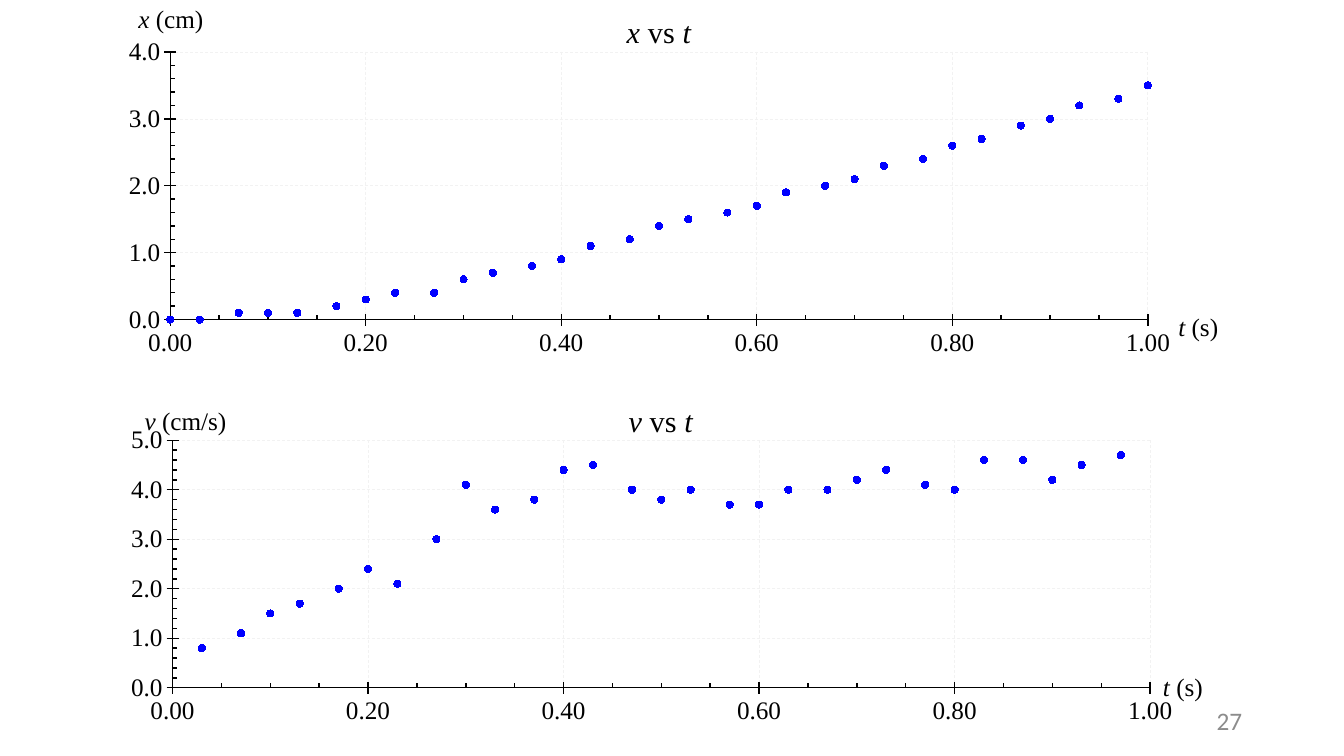
"""Build a slide with position and velocity scatter charts."""
from lxml.etree import SubElement
from pptx import Presentation
from pptx.chart.data import XyChartData
from pptx.dml.color import RGBColor
from pptx.enum.chart import XL_CHART_TYPE, XL_MARKER_STYLE, XL_TICK_MARK
from pptx.enum.dml import MSO_LINE
from pptx.enum.text import MSO_ANCHOR, PP_ALIGN
from pptx.oxml.ns import qn
from pptx.util import Inches, Pt

WIDTH, HEIGHT = Inches(13.33), Inches(7.5)
COLORS = {"text": "000000", "grid": "F2F2F2", "point": "0000FF", "number": "8C8C8C"}
SERIF = "Times New Roman"
FRAMES_PER_SECOND = 30

POSITIONS = [0, 0, 0.1, 0.1, 0.1, 0.2, 0.3, 0.4, 0.4, 0.6, 0.7, 0.8, 0.9, 1.1, 1.2, 1.4,
             1.5, 1.6, 1.7, 1.9, 2, 2.1, 2.3, 2.4, 2.6, 2.7, 2.9, 3, 3.2, 3.3, 3.5]
VELOCITIES = [None, 0.8, 1.1, 1.5, 1.7, 2, 2.4, 2.1, 3, 4.1, 3.6, 3.8, 4.4, 4.5, 4, 3.8,
              4, 3.7, 3.7, 4, 4, 4.2, 4.4, 4.1, 4, 4.6, 4.6, 4.2, 4.5, 4.7, None]


def color(name):
    """Return the named colour."""
    return RGBColor.from_string(COLORS[name])


def slide_box(left, top, width, height):
    """Turn percentages of the slide into lengths."""
    return (int(WIDTH * left / 100), int(HEIGHT * top / 100),
            int(WIDTH * width / 100), int(HEIGHT * height / 100))


def format_font(font, size=18, name=SERIF, fill="text", italic=False):
    """Set the font, size and colour."""
    font.size, font.name, font.italic, font.bold = Pt(size), name, italic, False
    font.color.rgb = color(fill)


def write_text(text_frame, text, symbols=(), align=None, **font_format):
    """Write words, with the given symbols in italics."""
    paragraph = text_frame.paragraphs[0]
    paragraph.alignment = align
    words = text.split(" ")
    for index, word in enumerate(words):
        run = paragraph.add_run()
        run.text = word if index == len(words) - 1 else word + " "
        format_font(run.font, italic=word in symbols, **font_format)


def place(element, target=None, **percentages):
    """Fix the layout of a chart part by percentages of the chart."""
    layout = element.find(qn("c:layout"))
    if layout is None:
        layout = SubElement(element, qn("c:layout"))
        element.insert(1 if element.find(qn("c:tx")) is not None else 0, layout)
    manual = SubElement(layout, qn("c:manualLayout"))
    settings = {"layoutTarget": target} if target else {}
    settings.update(xMode="edge", yMode="edge")
    settings.update((key, f"{value / 100:.4f}") for key, value in percentages.items())
    for key, value in settings.items():
        SubElement(manual, qn(f"c:{key}")).set("val", value)


def add_title(title, text, left, top, size=18):
    """Write and place a horizontal chart or axis title."""
    write_text(title.text_frame, text, symbols=("x", "v", "t"), size=size)
    body = title._element.find(".//" + qn("a:bodyPr"))
    body.set("rot", "0")
    body.set("vert", "horz")
    place(title._element, x=left, y=top)


def format_axis(axis, maximum, major, minor, number_format):
    """Set the scale, ticks, labels and grid of an axis."""
    axis.minimum_scale, axis.maximum_scale = 0, maximum
    axis.major_unit, axis.minor_unit = major, minor
    axis.major_tick_mark = XL_TICK_MARK.CROSS
    axis.minor_tick_mark = XL_TICK_MARK.INSIDE
    axis.tick_labels.number_format = number_format
    axis.tick_labels.number_format_is_linked = False
    format_font(axis.tick_labels.font)
    axis.format.line.color.rgb = color("text")
    axis.format.line.width = Pt(1)
    axis.has_major_gridlines = True
    grid = axis.major_gridlines.format.line
    grid.color.rgb = color("grid")
    grid.width = Pt(0.5)
    grid.dash_style = MSO_LINE.DASH


def clear_missing_points(chart_space):
    """Leave a gap wherever a point has no value."""
    for point in list(chart_space.iter(qn("c:pt"))):
        if point.findtext(qn("c:v")) in ("None", "", None):
            point.getparent().remove(point)


def add_scatter(slide, box, values, maximum, plot_left, titles):
    """Add a scatter chart of values against time."""
    data = XyChartData()
    series_data = data.add_series("Series 1")
    for frame, value in enumerate(values):
        series_data.add_data_point(round(frame / FRAMES_PER_SECOND, 2), value)
    chart = slide.shapes.add_chart(XL_CHART_TYPE.XY_SCATTER, *slide_box(*box), data).chart
    clear_missing_points(chart._chartSpace)
    format_font(chart.font)
    chart.has_legend = False
    chart.plots[0].vary_by_categories = False
    format_axis(chart.category_axis, 1, 0.2, 0.05, "0.00")
    format_axis(chart.value_axis, maximum, 1, 0.2, "0.0")
    add_title(chart.chart_title, *titles["chart"], size=21.6)
    add_title(chart.category_axis.axis_title, *titles["time"])
    add_title(chart.value_axis.axis_title, *titles["value"])
    place(chart._chartSpace.find(".//" + qn("c:plotArea")), target="inner",
          x=plot_left, y=13.8, w=76.65, h=71)
    series = chart.plots[0].series[0]
    series.smooth = False
    series.format.line.fill.background()
    marker = series.marker
    marker.style, marker.size = XL_MARKER_STYLE.CIRCLE, 5
    marker.format.fill.solid()
    marker.format.fill.fore_color.rgb = color("point")
    marker.format.line.color.rgb = color("point")


def add_slide_number(slide, text):
    """Add the slide number at the lower right."""
    text_frame = slide.shapes.add_textbox(*slide_box(70.67, 92.67, 22.5, 5.33)).text_frame
    text_frame.word_wrap = True
    text_frame.vertical_anchor = MSO_ANCHOR.MIDDLE
    write_text(text_frame, text, align=PP_ALIGN.RIGHT, name="Calibri", fill="number")


def main():
    """Build and save the presentation."""
    presentation = Presentation()
    presentation.slide_width, presentation.slide_height = WIDTH, HEIGHT
    slide = presentation.slides.add_slide(presentation.slide_layouts[6])
    add_scatter(slide, (0, 51.87, 94.9, 46.13), VELOCITIES, 5, 13.53, {
        "chart": ("v vs t", 49.05, 2.3),
        "time": ("t (s)", 90.95, 79.4),
        "value": ("v (cm/s)", 11.1, 3.15)})
    add_scatter(slide, (0, 0, 94.9, 49.87), POSITIONS, 4, 13.35, {
        "chart": ("x vs t", 48.9, 3),
        "time": ("t (s)", 92.15, 82.2),
        "value": ("x (cm)", 10.6, 0.25)})
    add_slide_number(slide, "27")
    presentation.save("out.pptx")


if __name__ == "__main__":
    main()
